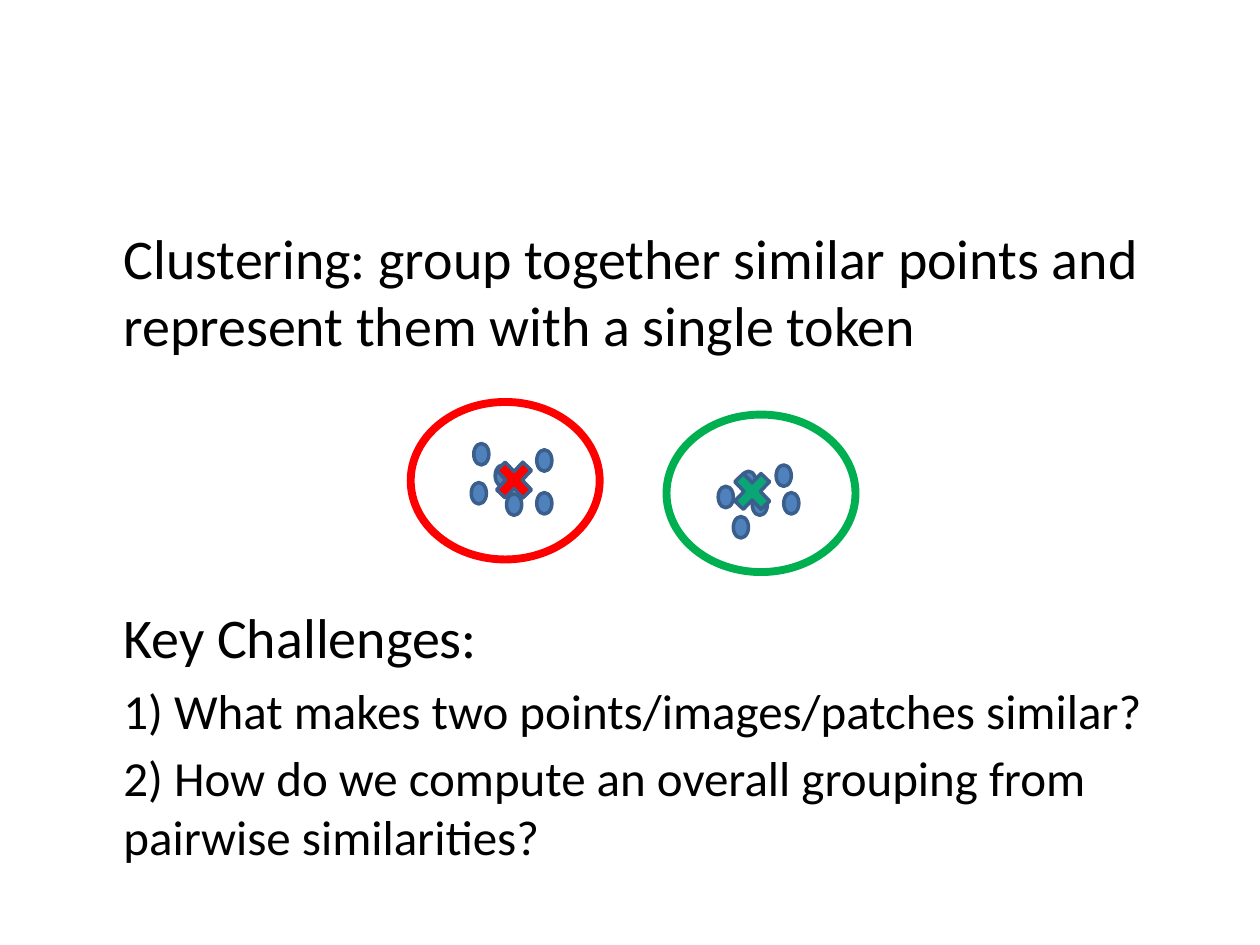
from lxml import etree
from pptx import Presentation
from pptx.dml.color import RGBColor
from pptx.enum.shapes import MSO_SHAPE
from pptx.enum.text import MSO_ANCHOR, MSO_AUTO_SIZE
from pptx.oxml.ns import qn
from pptx.util import Inches, Pt

OVAL = MSO_SHAPE.OVAL
CROSS = MSO_SHAPE.MATH_MULTIPLY
TOP = MSO_ANCHOR.TOP
NO_FIT = MSO_AUTO_SIZE.NONE

COLORS = {
    "text": "000000",
    "point": "4F81BD",
    "edge": "3A5F8C",
    "red": "FF0000",
    "green": "00B050",
    "teal": "0AA676",
}

LINES = [
    ("Clustering: group together similar points and represent them with a single token", 32, 0),
    ("Key Challenges:", 32, 140),
    ("1) What makes two points/images/patches similar?", 28, 6),
    ("2) How do we compute an overall grouping from pairwise similarities?", 28, 5),
]

RED_POINTS = [(0.5, 0.33), (0.67, 0.5), (0.48, 0.64), (0.76, 0.73), (1, 0.72), (1, 0.38)]
GREEN_POINTS = [(0.41, 0.57), (0.87, 0.4), (0.59, 0.45), (0.68, 0.63), (0.93, 0.62), (0.53, 0.81)]


def color(name):
    """Return the named colour."""
    return RGBColor.from_string(COLORS[name])


def add_mark(page, kind, box, fill, line, width):
    """Draw one preset shape; a fill of None leaves it hollow."""
    shape = page.shapes.add_shape(kind, *(Inches(length) for length in box))
    shape.shadow.inherit = False
    if fill is None:
        shape.fill.background()
    else:
        shape.fill.solid()
        shape.fill.fore_color.rgb = color(fill)
    shape.line.color.rgb = color(line)
    shape.line.width = Pt(width)


def add_cluster(page, box, points, ring, cross, center):
    """Draw points, their ring and the cross that stands for them."""
    left, top, width, height = box
    for x, y in points:
        add_mark(page, OVAL, (left + x, top + y, 0.12, 0.17), "point", "edge", 2)
    add_mark(page, OVAL, (left, top, width, height), None, ring, 4.5)
    x, y = center
    add_mark(page, CROSS, (left + x, top + y, 0.4, 0.42), cross, "edge", 2)


def fill_body(body, box):
    """Place the body placeholder and write its unbulleted lines."""
    body.left, body.top, body.width, body.height = (Inches(length) for length in box)
    frame = body.text_frame
    frame.word_wrap = True
    frame.auto_size = NO_FIT
    frame.vertical_anchor = TOP
    for index, (text, size, gap) in enumerate(LINES):
        para = frame.paragraphs[0] if index == 0 else frame.add_paragraph()
        properties = para._p.get_or_add_pPr()
        properties.set("marL", str(Inches(0.38)))
        properties.set("indent", "0")
        etree.SubElement(properties, qn("a:buNone"))
        para.space_before = Pt(gap)
        span = para.add_run()
        span.text = text
        span.font.name = "Calibri"
        span.font.size = Pt(size)
        span.font.color.rgb = color("text")


def main():
    """Build the clustering slide."""
    deck = Presentation()
    deck.slide_width, deck.slide_height = Inches(10), Inches(7.5)
    page = deck.slides.add_slide(deck.slide_layouts[1])
    title = page.shapes.title.element
    title.getparent().remove(title)
    fill_body(page.placeholders[1], (0.5, 1.72, 9, 5.44))
    add_cluster(page, (3.26, 3.19, 1.5, 1.25), RED_POINTS, "red", "red", (0.62, 0.41))
    add_cluster(page, (5.29, 3.29, 1.5, 1.25), GREEN_POINTS, "green", "teal", (0.48, 0.4))
    deck.save("out.pptx")


if __name__ == "__main__":
    main()
